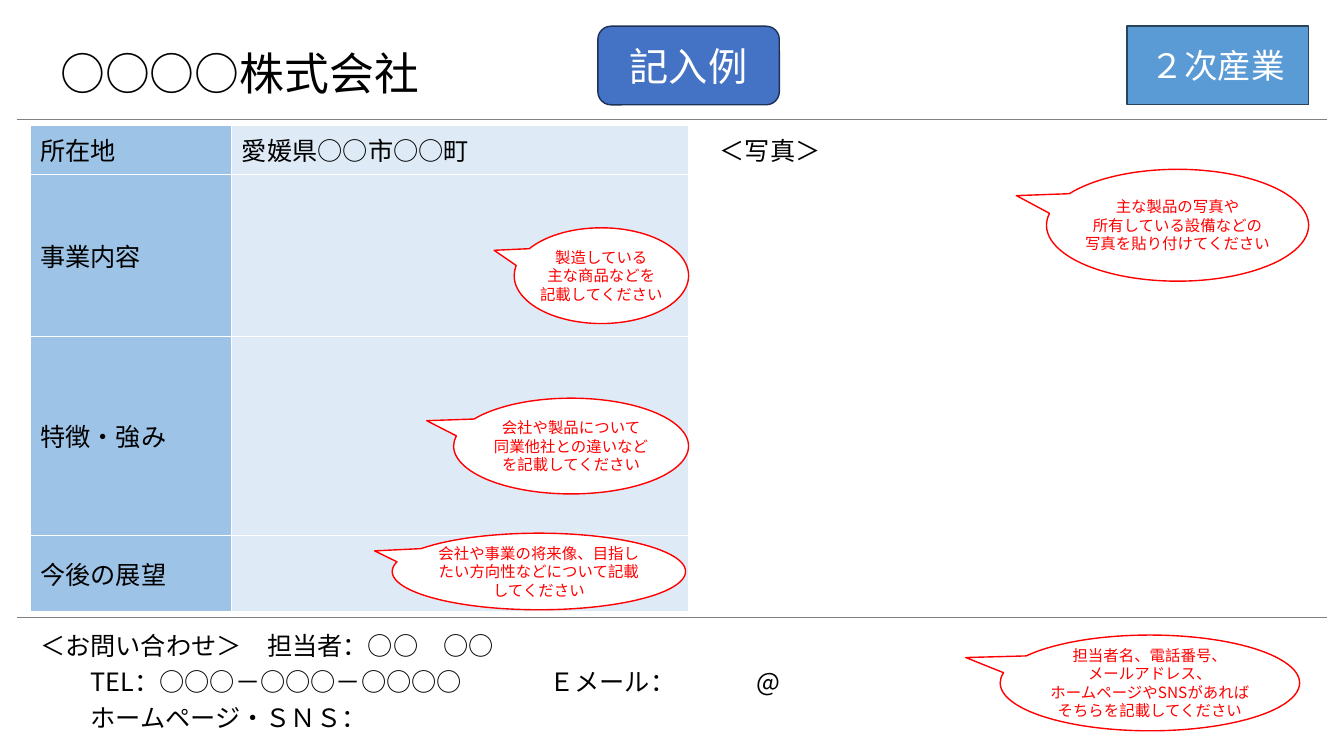
from lxml import etree
from pptx import Presentation
from pptx.dml.color import RGBColor
from pptx.enum.shapes import MSO_CONNECTOR, MSO_SHAPE
from pptx.enum.text import MSO_ANCHOR, PP_ALIGN
from pptx.oxml.ns import qn
from pptx.util import Inches, Pt

RECT = MSO_SHAPE.RECTANGLE
ROUNDED = MSO_SHAPE.ROUNDED_RECTANGLE
CALLOUT = MSO_SHAPE.OVAL_CALLOUT
STRAIGHT = MSO_CONNECTOR.STRAIGHT
TOP, MIDDLE = MSO_ANCHOR.TOP, MSO_ANCHOR.MIDDLE
LEFT, CENTER = PP_ALIGN.LEFT, PP_ALIGN.CENTER

FONT = "Noto Sans CJK JP"
BLACK = RGBColor(0x00, 0x00, 0x00)
WHITE = RGBColor(0xFF, 0xFF, 0xFF)
RED = RGBColor(0xFF, 0x00, 0x00)
GRAY = RGBColor(0x80, 0x80, 0x80)
SKY = RGBColor(0x5B, 0x9B, 0xD5)
SKY_EDGE = RGBColor(0x28, 0x44, 0x5D)
BLUE = RGBColor(0x44, 0x72, 0xC4)
BLUE_EDGE = RGBColor(0x1E, 0x32, 0x56)
LABEL_FILL = RGBColor(0x9D, 0xC3, 0xE6)
ENTRY_FILL = RGBColor(0xDE, 0xEB, 0xF7)

COLUMNS = (2, 4.53)
ROWS = (
    (0.49, "所在地", "愛媛県○○市○○町"),
    (1.61, "事業内容", ""),
    (1.97, "特徴・強み", ""),
    (0.76, "今後の展望", ""),
)
CONTACT = (
    "＜お問い合わせ＞　担当者：○○　○○",
    "\tTEL：○○○－○○○－○○○○\tＥメール：\t@",
    "\tホームページ・ＳＮＳ：",
)
CONTACT_TABS = (0.5, 5.05, 7.1)
WIDE_TAIL = (-0.615, -0.265)
CALLOUTS = (
    ((5.1, 2.26, 1.73, 0.95), WIDE_TAIL,
     ("製造している", "主な商品などを", "記載してください")),
    ((4.5, 3.95, 2.33, 0.95), WIDE_TAIL,
     ("会社や製品について", "同業他社との違いなど", "を記載してください")),
    ((3.89, 5.29, 2.91, 0.76), (-0.56, -0.269),
     ("会社や事業の将来像、目指したい方向性などについて記載してください",)),
    ((10.38, 1.68, 2.6, 1.11), WIDE_TAIL,
     ("主な製品の写真や", "所有している設備などの", "写真を貼り付けてください")),
    ((9.92, 6.3, 2.97, 0.95), WIDE_TAIL,
     ("担当者名、電話番号、", "メールアドレス、",
      "ホームページやSNSがあればそちらを記載してください")),
)


def add_tabs(p, stops):
    tabs = etree.SubElement(p._p.get_or_add_pPr(), qn("a:tabLst"))
    for stop in stops:
        etree.SubElement(tabs, qn("a:tab"), pos=str(Inches(stop)), algn="l")


def write(tf, lines, size, color=BLACK, align=LEFT, spacing=None, tabs=()):
    for i, line in enumerate(lines):
        p = tf.paragraphs[0] if i == 0 else tf.add_paragraph()
        p.alignment = align
        if spacing:
            p.line_spacing = spacing
        if "\t" in line:
            add_tabs(p, tabs)
        r = p.add_run()
        r.text = line
        for name, value in {"size": Pt(size), "name": FONT}.items():
            setattr(r.font, name, value)
        r.font.color.rgb = color
        etree.SubElement(r._r.get_or_add_rPr(), qn("a:ea"), typeface=FONT)


def add_text(s, box, lines, size, anchor=TOP, **style):
    tf = s.shapes.add_textbox(*map(Inches, box)).text_frame
    tf.word_wrap = True
    tf.vertical_anchor = anchor
    write(tf, lines, size, **style)


def add_panel(s, kind, box, lines, size, fill, edge, color):
    sp = s.shapes.add_shape(kind, *map(Inches, box))
    sp.shadow.inherit = False
    sp.fill.solid()
    sp.fill.fore_color.rgb = fill
    sp.line.color.rgb = edge
    sp.line.width = Pt(1)
    sp.text_frame.word_wrap = True
    sp.text_frame.vertical_anchor = MIDDLE
    write(sp.text_frame, lines, size, color, CENTER)
    return sp


def add_callout(s, box, tail, lines):
    sp = add_panel(s, CALLOUT, box, lines, 11, WHITE, RED, RED)
    for i, offset in enumerate(tail):
        sp.adjustments[i] = offset
    for side in ("left", "right", "top", "bottom"):
        setattr(sp.text_frame, f"margin_{side}", 0)


def add_rule(s, y):
    line = s.shapes.add_connector(
        STRAIGHT, Inches(0.17), Inches(y), Inches(13.16), Inches(y))
    line.line.color.rgb = GRAY
    line.line.width = Pt(0.5)
    etree.SubElement(line._element.spPr, qn("a:effectLst"))


def add_borders(cell):
    tcPr = cell._tc.get_or_add_tcPr()
    for i, side in enumerate(("lnL", "lnR", "lnT", "lnB")):
        ln = etree.Element(qn(f"a:{side}"), w=str(Pt(1)))
        fill = etree.SubElement(ln, qn("a:solidFill"))
        etree.SubElement(fill, qn("a:srgbClr"), val=str(WHITE))
        tcPr.insert(i, ln)


def add_profile_table(s):
    height = sum(row[0] for row in ROWS)
    table = s.shapes.add_table(
        len(ROWS), len(COLUMNS), Inches(0.3), Inches(1.24),
        Inches(sum(COLUMNS)), Inches(height)).table
    for column, width in zip(table.columns, COLUMNS):
        column.width = Inches(width)
    for i, (row_height, *texts) in enumerate(ROWS):
        table.rows[i].height = Inches(row_height)
        for j, (text, fill) in enumerate(zip(texts, (LABEL_FILL, ENTRY_FILL))):
            cell = table.cell(i, j)
            cell.vertical_anchor = MIDDLE
            cell.fill.solid()
            cell.fill.fore_color.rgb = fill
            add_borders(cell)
            if text:
                write(cell.text_frame, [text], 18)


def main():
    prs = Presentation()
    prs.slide_width, prs.slide_height = Inches(13.33), Inches(7.5)
    s = prs.slides.add_slide(prs.slide_layouts[6])
    add_text(s, (0.5, 0.26, 9.19, 0.98), ["○○○○株式会社"], 32, MIDDLE, spacing=0.9)
    for y in (1.18, 6.12):
        add_rule(s, y)
    add_text(s, (0.3, 6.14, 12.68, 1.17), CONTACT, 18,
             spacing=1.2, tabs=CONTACT_TABS)
    add_panel(s, RECT, (11.18, 0.26, 1.8, 0.78), ["２次産業"], 24,
              SKY, SKY_EDGE, WHITE)
    add_profile_table(s)
    add_text(s, (7.04, 1.23, 1.94, 0.44), ["＜写真＞"], 18, spacing=1.2)
    add_panel(s, ROUNDED, (5.93, 0.26, 1.8, 0.78), ["記入例"], 28,
              BLUE, BLUE_EDGE, WHITE)
    for box, tail, lines in CALLOUTS:
        add_callout(s, box, tail, lines)
    prs.save("out.pptx")


if __name__ == "__main__":
    main()
